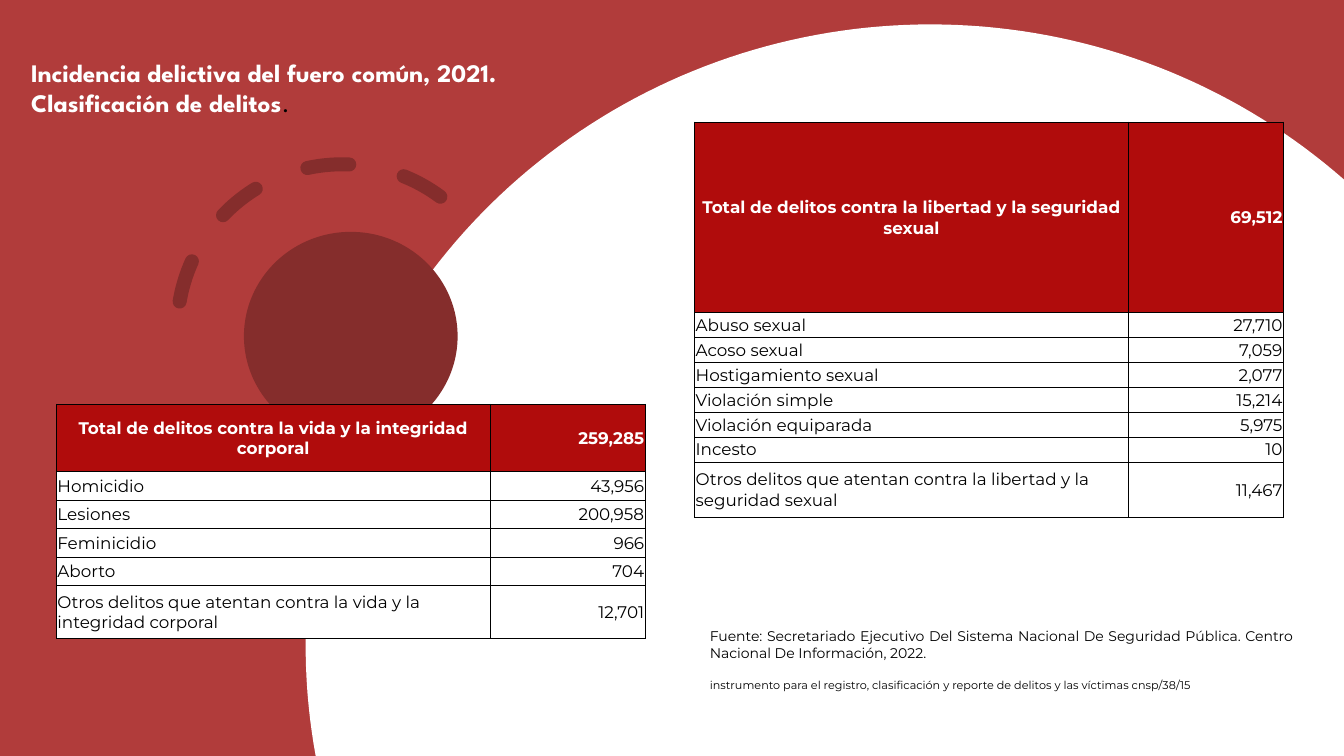
"""Build the slide on crimes under common jurisdiction, 2021."""
import math

from lxml import etree
from pptx import Presentation
from pptx import util as u
from pptx.dml.color import RGBColor
from pptx.enum import shapes, text
from pptx.oxml import ns

RED, DARK, HEADER = "B13C3B", "852D2C", "B00C0C"
WHITE, BLACK = "FFFFFF", "000000"
LEFT, CENTER = text.PP_ALIGN.LEFT, text.PP_ALIGN.CENTER
RIGHT, JUSTIFY = text.PP_ALIGN.RIGHT, text.PP_ALIGN.JUSTIFY

deck = Presentation()
deck.slide_width, deck.slide_height = u.Inches(13.33), u.Inches(7.5)
page = deck.slides.add_slide(deck.slide_layouts[6])


def share(*percents):
    """Turn alternating width and height percentages into lengths."""
    sides = (deck.slide_width, deck.slide_height)
    return [u.Emu(round(sides[i % 2] * p / 100)) for i, p in enumerate(percents)]


def paint(fill, color):
    """Give a fill one solid colour."""
    fill.solid()
    fill.fore_color.rgb = RGBColor.from_string(color)


backdrop = page.shapes.add_shape(shapes.MSO_SHAPE.RECTANGLE, *share(0, 0, 100, 100))

center_x, center_y, radius_x, radius_y = 69.24, 85.33, 46.5, 82.1
start = math.pi - math.asin((100 - center_y) / radius_y)
end = 2 * math.pi - math.acos((100 - center_x) / radius_x)
steps = 120
angles = [start + (end - start) * i / steps for i in range(steps + 1)]
rim = [share(center_x + radius_x * math.cos(a), center_y + radius_y * math.sin(a)) for a in angles]
outline = page.shapes.build_freeform(*rim[0])
outline.add_line_segments(rim[1:] + [share(100, 100)], close=True)
white_circle = outline.convert_to_shape()

dark_circle = page.shapes.add_shape(shapes.MSO_SHAPE.OVAL, *share(18.15, 30.67, 15.9, 27.6))
for shape, color in ((backdrop, RED), (white_circle, WHITE), (dark_circle, DARK)):
    shape.shadow.inherit = False
    paint(shape.fill, color)
    shape.line.fill.background()

arc = page.shapes.add_shape(shapes.MSO_SHAPE.ARC, *share(13.2, 21.73, 24.53, 43.6))
arc.shadow.inherit = False
arc.rotation = 308.7
arc.adjustments[0], arc.adjustments[1] = 144.555, 2.278
arc.fill.background()
paint(arc.line.fill, DARK)
arc.line.width = u.Pt(10)
arc.line.dash_style = 4
arc.line._get_or_add_ln().set("cap", "rnd")

life_crimes = [
    ("Total de delitos contra la vida y la integridad corporal", "259,285"),
    ("Homicidio", "43,956"),
    ("Lesiones", "200,958"),
    ("Feminicidio", "966"),
    ("Aborto", "704"),
    ("Otros delitos que atentan contra la vida y la integridad corporal", "12,701"),
]
sexual_crimes = [
    ("Total de delitos contra la libertad y la seguridad sexual", "69,512"),
    ("Abuso sexual", "27,710"),
    ("Acoso sexual", "7,059"),
    ("Hostigamiento sexual", "2,077"),
    ("Violación simple", "15,214"),
    ("Violación equiparada", "5,975"),
    ("Incesto", "10"),
    ("Otros delitos que atentan contra la libertad y la seguridad sexual", "11,467"),
]
sources = [
    ("Fuente: Secretariado Ejecutivo Del Sistema Nacional De Seguridad Pública. "
     "Centro Nacional De Información, 2022.",),
    ("",),
    ("instrumento para el registro, clasificación y reporte de delitos y las víctimas cnsp/38/15",),
]
crime_widths = [32.26, 11.55]
grids = [
    (life_crimes, 4.2, 53.47, crime_widths, [8.87] + [3.78] * 4 + [7]),
    (sexual_crimes, 51.69, 16.13, crime_widths, [25.24] + [3.29] * 6 + [7.35]),
    (sources, 52.74, 82.93, [43.51], [4.67, 2, 2]),
]
for rows, left, top, widths, heights in grids:
    is_source = rows is sources
    area = share(left, top, sum(widths), sum(heights))
    table = page.shapes.add_table(len(rows), len(widths), *area).table
    table.first_row = table.horz_banding = False
    for column, width in zip(table.columns, widths):
        column.width = share(width)[0]
    for r, (row, height) in enumerate(zip(rows, heights)):
        table.rows[r].height = share(0, height)[1]
        is_header = r == 0 and not is_source
        size = 12 if not is_source else 10 if r == 0 else 8
        for c, words in enumerate(row):
            cell = table.cell(r, c)
            paint(cell.fill, HEADER if is_header else WHITE)
            cell.vertical_anchor = text.MSO_ANCHOR.MIDDLE
            cell.margin_left = cell.margin_right = cell.margin_top = u.Inches(0.01)
            cell.margin_bottom = 0
            para = cell.text_frame.paragraphs[0]
            para.text = words
            para.alignment = JUSTIFY if is_source else RIGHT if c else CENTER if is_header else LEFT
            for span in para.runs:
                span.font.name, span.font.size, span.font.bold = "Montserrat", u.Pt(size), is_header
                paint(span.font.fill, WHITE if is_header else BLACK)
            if not words:
                etree.SubElement(para._p, ns.qn("a:endParaRPr"), sz=str(size * 100))
            if not is_source:
                for i, side in enumerate(("lnL", "lnR", "lnT", "lnB")):
                    border = etree.Element(ns.qn("a:" + side), w=str(u.Pt(0.5)))
                    solid = etree.SubElement(border, ns.qn("a:solidFill"))
                    etree.SubElement(solid, ns.qn("a:srgbClr"), val=BLACK)
                    cell._tc.get_or_add_tcPr().insert(i, border)

title = page.shapes.add_textbox(*share(1.58, 6.93, 47.94, 9.47)).text_frame
title.word_wrap = True
title.text = "Incidencia delictiva del fuero común, 2021.\nClasificación de delitos"
title.paragraphs[1].add_run().text = "."
for para in title.paragraphs:
    for span in para.runs:
        is_dot = span.text == "."
        span.font.name, span.font.size, span.font.bold = "League Spartan", u.Pt(18), not is_dot
        paint(span.font.fill, BLACK if is_dot else WHITE)

deck.save("out.pptx")
